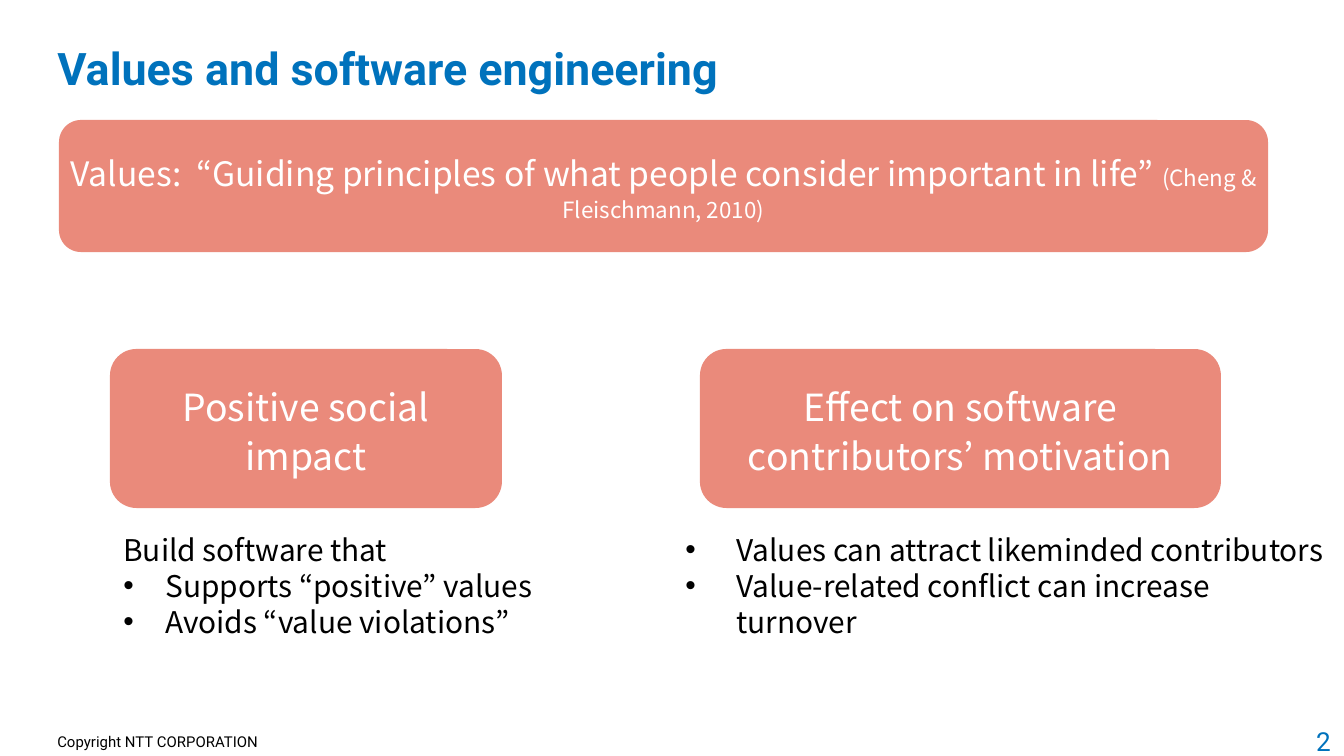
from lxml import etree
from pptx import Presentation
from pptx.dml.color import RGBColor
from pptx.enum.shapes import MSO_SHAPE as Shape
from pptx.enum.text import MSO_ANCHOR as Anchor, MSO_AUTO_SIZE as AutoSize, PP_ALIGN as Align
from pptx.oxml.ns import qn
from pptx.util import Pt

SCALE = 914400 / 134.4
SANS, HEADING = "Noto Sans CJK JP", "Roboto"
BLUE, CORAL, WHITE, BLACK = "0072BC", "EA8A7B", "FFFFFF", "000000"


def px(*lengths):
    return [round(length * SCALE) for length in lengths]


def add_run(para, text, size, face, color, bold=False):
    span = para.add_run()
    span.text = text
    span.font.size = Pt(size)
    span.font.name = face
    span.font.bold = bold
    span.font.color.rgb = RGBColor.from_string(color)


deck = Presentation()
deck.slide_width, deck.slide_height = px(1344, 756)
page = deck.slides.add_slide(deck.slide_layouts[3])

title = page.shapes.title
title.left, title.top, title.width, title.height = px(44, 19, 1073, 87)
title.text_frame.auto_size = AutoSize.NONE
title.text_frame.vertical_anchor = Anchor.MIDDLE
para = title.text_frame.paragraphs[0]
para.alignment = Align.LEFT
para.line_spacing = 1.2
add_run(para, "Values and software engineering", 24, HEADING, BLUE, True)

cards = [
    ((59, 120, 1209, 132), [
        ("Values:\u00a0 “Guiding principles of what people consider important in life” ".replace("\u00a0", " "), 18),
        ("(Cheng & Fleischmann, 2010)", 12),
    ]),
    ((110, 349, 392, 159), [("Positive social impact", 20)]),
    ((700, 349, 521, 159), [("Effect on software contributors’ motivation", 20)]),
]
for place, spans in cards:
    card = page.shapes.add_shape(Shape.ROUNDED_RECTANGLE, *px(*place))
    card.shadow.inherit = False
    card.fill.solid()
    card.fill.fore_color.rgb = RGBColor.from_string(CORAL)
    card.line.fill.background()
    frame = card.text_frame
    frame.word_wrap = True
    frame.vertical_anchor = Anchor.MIDDLE
    frame.margin_left, frame.margin_top, frame.margin_right, frame.margin_bottom = px(5, 5, 5, 5)
    para = frame.paragraphs[0]
    para.alignment = Align.CENTER
    para.line_spacing = 1.1
    for text, size in spans:
        add_run(para, text, size, SANS, WHITE)

lists = [
    (1, (110, 525, 454, 122), 42, [
        ("Build software that", False),
        ("Supports “positive” values", True),
        ("Avoids “value violations”", True),
    ]),
    (2, (672, 525, 672, 159), 51, [
        ("Values can attract likeminded contributors", True),
        ("Value-related conflict can increase turnover", True),
    ]),
]
for index, place, indent, items in lists:
    body = page.placeholders[index]
    body.left, body.top, body.width, body.height = px(*place)
    frame = body.text_frame
    frame.auto_size = AutoSize.NONE
    for number, (text, bulleted) in enumerate(items):
        para = frame.add_paragraph() if number else frame.paragraphs[0]
        para.space_before = Pt(0)
        props = para._p.get_or_add_pPr()
        hang = px(indent)[0] if bulleted else 0
        props.set("marL", str(hang))
        props.set("indent", str(-hang))
        if bulleted:
            etree.SubElement(props, qn("a:buFont"), typeface="Arial")
            etree.SubElement(props, qn("a:buChar"), char="•")
        else:
            etree.SubElement(props, qn("a:buNone"))
        add_run(para, text, 16, SANS, BLACK)

footers = [
    ((44, 726, 328, 32), "Copyright NTT CORPORATION", 8, BLACK, Align.LEFT, Anchor.TOP),
    ((1042, 726, 302, 30), "2", 14, BLUE, Align.RIGHT, Anchor.MIDDLE),
]
for place, text, size, color, alignment, anchor in footers:
    box = page.shapes.add_textbox(*px(*place))
    box.text_frame.word_wrap = True
    box.text_frame.vertical_anchor = anchor
    para = box.text_frame.paragraphs[0]
    para.alignment = alignment
    add_run(para, text, size, HEADING, color)

deck.save("out.pptx")
